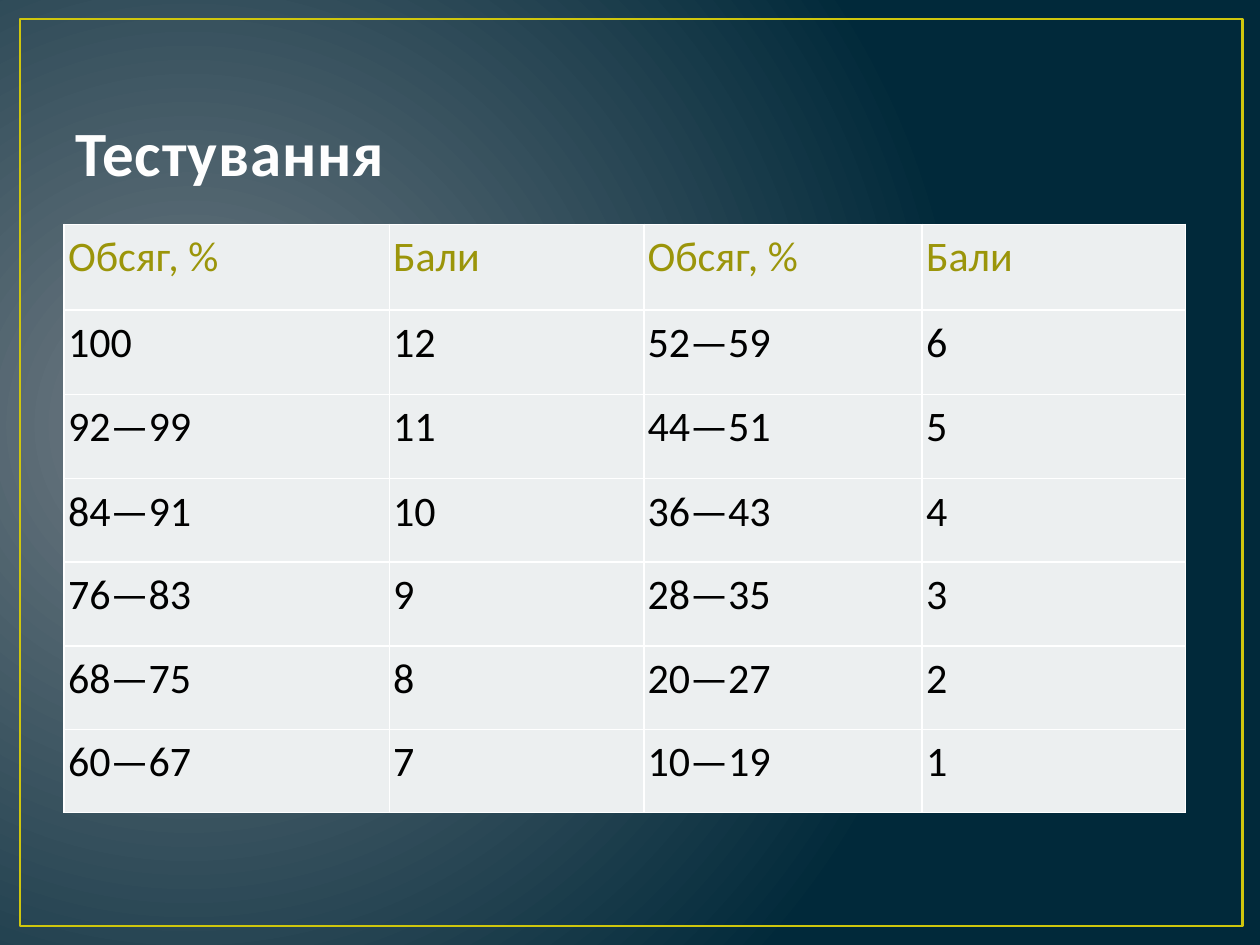
import pptx
import pptx.util
import pptx.dml.color
import pptx.enum.shapes
import pptx.enum.text
import pptx.oxml
import pptx.oxml.ns
import lxml.etree

WIDE, HIGH = 10, 7.5
COLS = [2.58, 2.02, 2.21, 2.09]
ROWS = [0.68, 0.67, 0.67, 0.66, 0.67, 0.66, 0.66]
GRADES = [
    ["Обсяг, %", "Бали", "Обсяг, %", "Бали"],
    ["100", "12", "52—59", "6"],
    ["92—99", "11", "44—51", "5"],
    ["84—91", "10", "36—43", "4"],
    ["76—83", "9", "28—35", "3"],
    ["68—75", "8", "20—27", "2"],
    ["60—67", "7", "10—19", "1"],
]
inch = pptx.util.Inches
qn = pptx.oxml.ns.qn
ALIGN = pptx.enum.text.PP_ALIGN
ANCHOR = pptx.enum.text.MSO_ANCHOR


def paint(code):
    return pptx.dml.color.RGBColor.from_string(code)


def place(left, top, wide, high):
    return (inch(left * WIDE), inch(top * HIGH),
            inch(wide * WIDE), inch(high * HIGH))


def write(frame, text, size=24, color="000000", bold=False,
          align=ALIGN.LEFT, lines=None, track=None):
    frame.word_wrap = True
    para = frame.paragraphs[0]
    para.alignment = align
    para.line_spacing = lines
    run = para.add_run()
    run.text = text
    run.font.name = "Calibri"
    run.font.size = pptx.util.Pt(size)
    run.font.bold = bold
    run.font.color.rgb = paint(color)
    if track:
        run.font._element.set("spc", str(int(track * 100)))


def backdrop(slide):
    fill = slide.background.fill
    fill.gradient()
    for stop, code in zip(fill.gradient_stops, ["717C84", "01293A"]):
        stop.color.rgb = paint(code)
    grad = slide._element.find(".//" + qn("a:gradFill"))
    grad.remove(grad.find(qn("a:lin")))
    glow = lxml.etree.SubElement(grad, qn("a:path"), path="circle")
    lxml.etree.SubElement(glow, qn("a:fillToRect"),
                          l="15000", t="50000", r="85000", b="60000")


def border(slide):
    box = slide.shapes.add_shape(pptx.enum.shapes.MSO_SHAPE.RECTANGLE,
                                 *place(0.016, 0.02, 0.97, 0.96))
    box.shadow.inherit = False
    box.fill.background()
    box.line.color.rgb = paint("CFC60D")
    box.line.width = pptx.util.Pt(1.5)


def title(slide, text):
    frame = slide.shapes.add_textbox(*place(0.05, 0.04, 0.9, 1 / 6)).text_frame
    frame.vertical_anchor = ANCHOR.BOTTOM
    write(frame, text, size=36, color="FEFEFE", bold=True, track=0.5)


def edge(cell):
    props = cell._tc.get_or_add_tcPr()
    for spot, side in enumerate(["lnL", "lnR", "lnT", "lnB"]):
        props.insert(spot, pptx.oxml.parse_xml(
            f'<a:{side} {pptx.oxml.ns.nsdecls("a")} w="12700"><a:solidFill>'
            f'<a:srgbClr val="FFFFFF"/></a:solidFill></a:{side}>'))


def grid(slide, data):
    left, top = inch(0.51), inch(1.78)
    table = slide.shapes.add_table(len(ROWS), len(COLS), left, top,
                                   inch(sum(COLS)), inch(sum(ROWS))).table
    for col, wide in zip(table.columns, COLS):
        col.width = inch(wide)
    for row, high, texts in zip(table.rows, ROWS, data):
        row.height = inch(high)
        color = "9B950A" if texts is data[0] else "000000"
        for cell, text in zip(row.cells, texts):
            cell.margin_left = cell.margin_right = inch(0.03)
            cell.margin_top = cell.margin_bottom = 0
            cell.fill.solid()
            cell.fill.fore_color.rgb = paint("ECEFF0")
            edge(cell)
            write(cell.text_frame, text, color=color,
                  align=ALIGN.JUSTIFY, lines=1.15)


def main():
    deck = pptx.Presentation()
    deck.slide_width, deck.slide_height = inch(WIDE), inch(HIGH)
    slide = deck.slides.add_slide(deck.slide_layouts[6])
    backdrop(slide)
    border(slide)
    title(slide, "Тестування")
    grid(slide, GRADES)
    deck.save("out.pptx")


if __name__ == "__main__":
    main()
